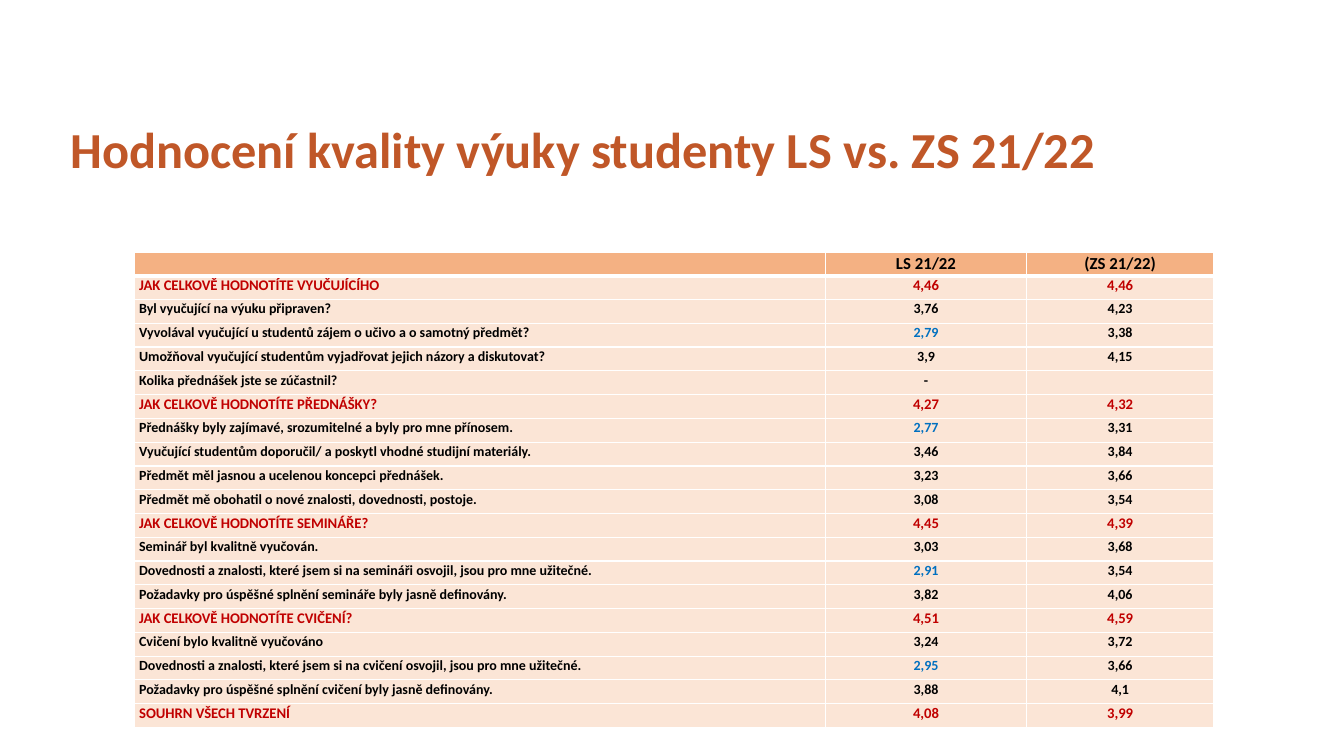
import pptx
import pptx.dml.color
import pptx.enum.text
import pptx.oxml.ns
import pptx.util
from dataclasses import dataclass
from lxml import etree
from pptx.util import Inches


@dataclass(frozen=True)
class Theme:
    font: str = "Calibri"
    title: str = "C05728"
    text: str = "000000"
    summary: str = "C00000"
    low: str = "0070C0"
    header_fill: str = "F4B183"
    body_fill: str = "FBE5D6"
    border: str = "FFFFFF"
    title_size: float = 36
    header_size: float = 12
    summary_size: float = 10.5
    body_size: float = 10


theme = Theme()
qn = pptx.oxml.ns.qn
ALIGN = pptx.enum.text.PP_ALIGN


def style_paragraph(paragraph, size, color, align, spacing):
    paragraph.alignment = align
    paragraph.line_spacing = spacing
    for run in paragraph.runs:
        run.font.name = theme.font
        run.font.size = pptx.util.Pt(size)
        run.font.bold = True
        run.font.color.rgb = pptx.dml.color.RGBColor.from_string(color)
    if not paragraph.runs:
        # An empty cell needs its own type size to keep the row low
        etree.SubElement(paragraph._p, qn("a:endParaRPr"), sz=str(int(size * 100)))


def style_cell(cell, fill, bottom_width):
    cell.margin_left = cell.margin_right = Inches(0.05)
    cell.margin_top = cell.margin_bottom = 0
    cell.vertical_anchor = pptx.enum.text.MSO_ANCHOR.TOP
    properties = cell._tc.get_or_add_tcPr()
    for side, width in (("L", 1), ("R", 1), ("T", 1), ("B", bottom_width)):
        line = etree.SubElement(properties, qn(f"a:ln{side}"), w=str(pptx.util.Pt(width)))
        solid = etree.SubElement(line, qn("a:solidFill"))
        etree.SubElement(solid, qn("a:srgbClr"), val=theme.border)
    cell.fill.solid()
    cell.fill.fore_color.rgb = pptx.dml.color.RGBColor.from_string(fill)


presentation = pptx.Presentation()
presentation.slide_width = Inches(13.33)
presentation.slide_height = Inches(7.5)
slide = presentation.slides.add_slide(presentation.slide_layouts[6])

# Title
title = slide.shapes.add_textbox(Inches(-0.74), Inches(1.19), Inches(13.05), Inches(1.31))
title.text_frame.word_wrap = True
title.text_frame.text = "Hodnocení kvality výuky studenty LS vs. ZS 21/22"
style_paragraph(title.text_frame.paragraphs[0], theme.title_size, theme.title, ALIGN.CENTER, 0.9)

# Ratings: statement, summer term, winter term
ratings = [
    ("", "LS 21/22", "(ZS 21/22)"),
    ("JAK CELKOVĚ HODNOTÍTE VYUČUJÍCÍHO", "4,46", "4,46"),
    ("Byl vyučující na výuku připraven?", "3,76", "4,23"),
    ("Vyvolával vyučující u studentů zájem o učivo a o samotný předmět?", "2,79", "3,38"),
    ("Umožňoval vyučující studentům vyjadřovat jejich názory a diskutovat?", "3,9", "4,15"),
    ("Kolika přednášek jste se zúčastnil?", "-", ""),
    ("JAK CELKOVĚ HODNOTÍTE PŘEDNÁŠKY?", "4,27", "4,32"),
    ("Přednášky byly zajímavé, srozumitelné a byly pro mne přínosem.", "2,77", "3,31"),
    ("Vyučující studentům doporučil/ a poskytl vhodné studijní materiály.", "3,46", "3,84"),
    ("Předmět měl jasnou a ucelenou koncepci přednášek.", "3,23", "3,66"),
    ("Předmět mě obohatil o nové znalosti, dovednosti, postoje.", "3,08", "3,54"),
    ("JAK CELKOVĚ HODNOTÍTE SEMINÁŘE?", "4,45", "4,39"),
    ("Seminář byl kvalitně vyučován.", "3,03", "3,68"),
    ("Dovednosti a znalosti, které jsem si na semináři osvojil, jsou pro mne užitečné.", "2,91", "3,54"),
    ("Požadavky pro úspěšné splnění semináře byly jasně definovány.", "3,82", "4,06"),
    ("JAK CELKOVĚ HODNOTÍTE CVIČENÍ?", "4,51", "4,59"),
    ("Cvičení bylo kvalitně vyučováno", "3,24", "3,72"),
    ("Dovednosti a znalosti, které jsem si na cvičení osvojil, jsou pro mne užitečné.", "2,95", "3,66"),
    ("Požadavky pro úspěšné splnění cvičení byly jasně definovány.", "3,88", "4,1"),
    ("SOUHRN VŠECH TVRZENÍ", "4,08", "3,99"),
]

# Ratings table
table = slide.shapes.add_table(
    len(ratings), 3, Inches(1.33), Inches(2.5), Inches(10.7), Inches(4.72)
).table
for column, width in zip(table.columns, (6.86, 1.99, 1.86)):
    column.width = Inches(width)

for row_index, rating in enumerate(ratings):
    table.rows[row_index].height = Inches(4.72 / len(ratings))
    is_header = row_index == 0
    if is_header:
        size, row_color = theme.header_size, theme.text
    elif rating[0].isupper():
        size, row_color = theme.summary_size, theme.summary
    else:
        size, row_color = theme.body_size, theme.text

    for column_index, entry in enumerate(rating):
        cell = table.cell(row_index, column_index)
        style_cell(cell, theme.header_fill if is_header else theme.body_fill, 3 if is_header else 1)
        cell.text_frame.text = entry
        # Scores below three stand out
        color = theme.low if entry.startswith("2,") else row_color
        align = ALIGN.CENTER if column_index else ALIGN.LEFT
        style_paragraph(cell.text_frame.paragraphs[0], size, color, align, 1.07)

presentation.save("out.pptx")
